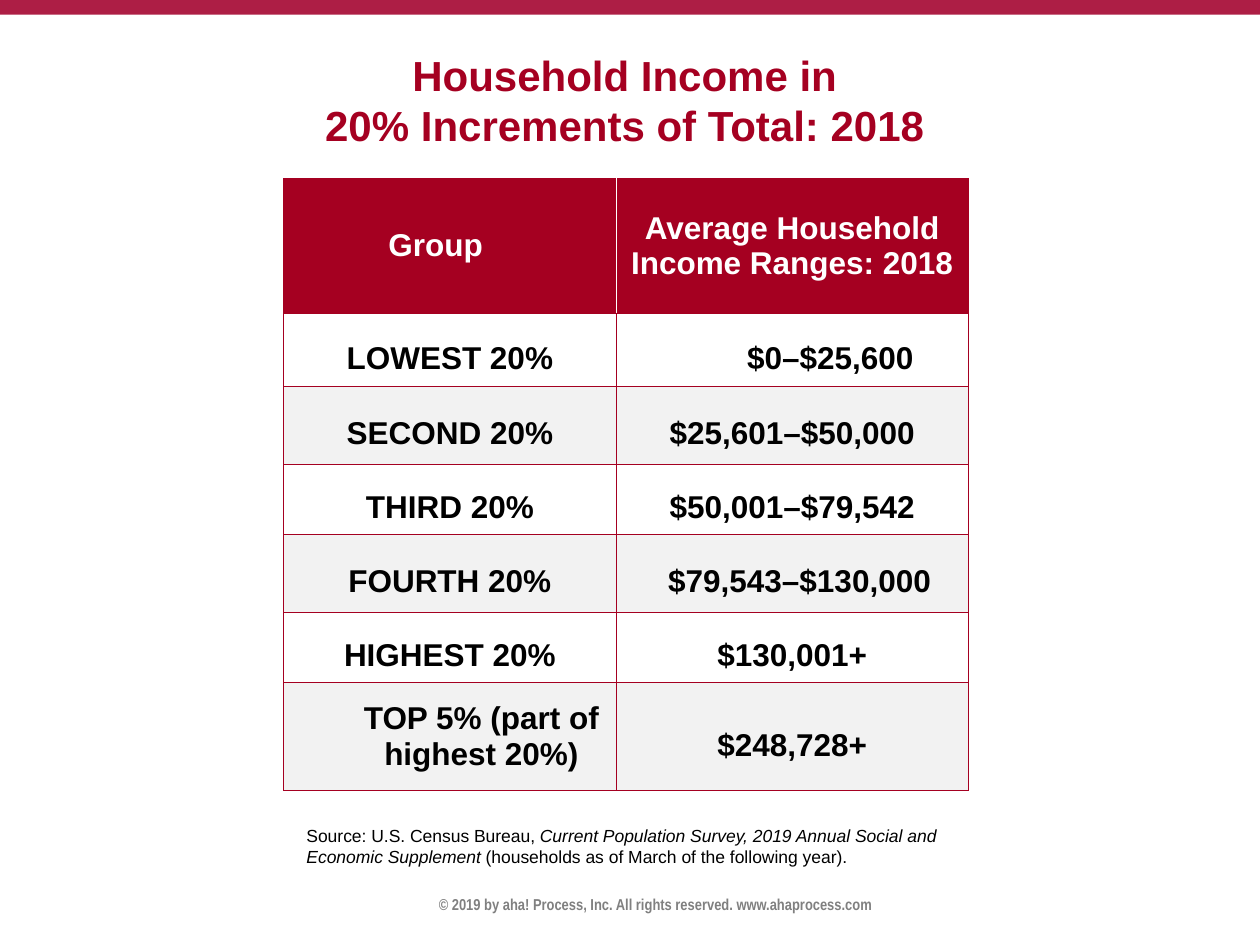
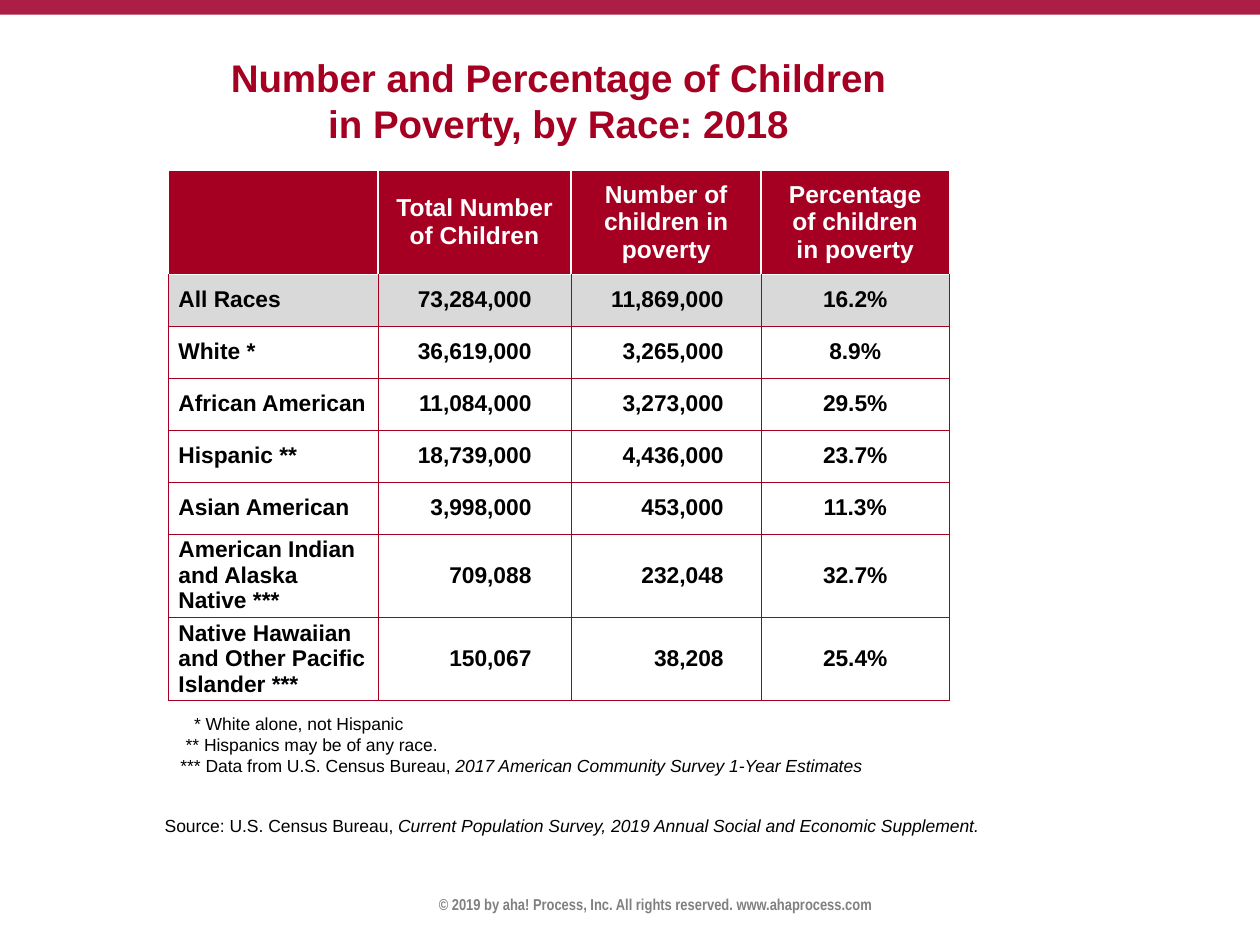
import lxml.etree
import pptx
import pptx.dml.color
import pptx.enum.shapes
import pptx.enum.text
import pptx.oxml.ns
import pptx.util

colour = pptx.dml.color.RGBColor.from_string
qn = pptx.oxml.ns.qn
ALIGN = pptx.enum.text.PP_ALIGN
LEFT, CENTER, RIGHT = ALIGN.LEFT, ALIGN.CENTER, ALIGN.RIGHT
MIDDLE = pptx.enum.text.MSO_ANCHOR.MIDDLE
CRIMSON, BAND, WHITE, BLACK, GREY = "A50021", "AD1E45", "FFFFFF", "000000", "808080"


def grid(*cells):
    """Turn counts of grid cells (the slide is 120 by 90) into lengths."""
    return [pptx.util.Inches(count / 12) for count in cells]


def write(frame, text, size, ink, align=LEFT, bold=False, font="Arial", spacing=None):
    """Fill a frame: a line break starts a paragraph, bars enclose italics."""
    frame.word_wrap = True
    for index, line in enumerate(text.split("\n")):
        para = frame.paragraphs[0] if index == 0 else frame.add_paragraph()
        para.alignment = align
        if spacing:
            para.line_spacing = spacing
        for part, words in enumerate(line.split("|")):
            if not words:
                continue
            span = para.add_run()
            span.text = words
            span.font.name, span.font.size = font, pptx.util.Pt(size)
            span.font.bold, span.font.italic = bold, part % 2 == 1
            span.font.color.rgb = colour(ink)


# Columns hold (width, alignment, left margin, right margin);
# exceptions hold (alignment, left margin, right margin) by row and column.
slides = [
    {
        "title": "Household Income in\n20% Increments of Total: 2018",
        "title size": 24,
        "title place": (27, 3, 65, 13),
        "table corner": (27, 17),
        "columns": [(31.7, CENTER, 0.8, 0.8), (33.5, CENTER, 0.8, 0.8)],
        "row heights": [12.8, 7, 7.4, 6.7, 7.4, 6.7, 10.3],
        "cells": [
            ("Group", "Average Household Income Ranges: 2018"),
            ("LOWEST 20%", "$0–$25,600"),
            ("SECOND 20%", "$25,601–$50,000"),
            ("THIRD 20%", "$50,001–$79,542"),
            ("FOURTH 20%", "$79,543–$130,000"),
            ("HIGHEST 20%", "$130,001+"),
            ("TOP 5% (part of highest 20%)", "$248,728+"),
        ],
        "exceptions": {
            (0, 0): (LEFT, 10, 0.8),
            (1, 1): (RIGHT, 0.8, 5.2),
            (4, 1): (CENTER, 2.2, 0.8),
            (6, 0): (CENTER, 6.8, 0.8),
        },
        "single spaced": [(6, 0)],
        "spacing": 1.5,
        "sizes": (18, 18),
        "fills": [WHITE, "F2F2F2"] * 3,
        "header edge": CRIMSON,
        "header rule": 0.25,
        "notes": [
            ((28, 78, 63, 5.3), "Source: U.S. Census Bureau, |Current Population Survey, "
             "2019 Annual Social and Economic Supplement |(households as of March of the "
             "following year).", [0]),
        ],
    },
    {
        "title": "Number and Percentage of Children\nin Poverty, by Race: 2018",
        "title size": 22,
        "title place": (16, 3, 74.4, 13),
        "table corner": (16, 16.2),
        "columns": [(20, LEFT, 1, 1), (18.4, RIGHT, 1, 3.8),
                    (18.1, RIGHT, 0.6, 3.6), (17.9, CENTER, 1, 1)],
        "row heights": [9.9] + [4.95] * 5 + [7.95] * 2,
        "cells": [
            ("", "Total Number of Children", "Number of children in poverty",
             "Percentage\nof children\nin poverty"),
            ("All Races", "73,284,000", "11,869,000", "16.2%"),
            ("White *", "36,619,000", "3,265,000", "8.9%"),
            ("African American", "11,084,000", "3,273,000", "29.5%"),
            ("Hispanic **", "18,739,000", "4,436,000", "23.7%"),
            ("Asian American", "3,998,000", "453,000", "11.3%"),
            ("American Indian\nand Alaska Native ***", "709,088", "232,048", "32.7%"),
            ("Native Hawaiian\nand Other Pacific Islander ***", "150,067", "38,208", "25.4%"),
        ],
        "exceptions": {(0, column): (CENTER, 1, 1) for column in range(4)},
        "single spaced": [],
        "spacing": None,
        "sizes": (14, 13),
        "fills": ["D9D9D9"] + [WHITE] * 6,
        "header edge": WHITE,
        "header rule": 1,
        "notes": [
            ((16, 67.3, 84, 7.3), "* White alone, not Hispanic\n"
             "** Hispanics may be of any race.\n"
             "*** Data from U.S. Census Bureau, |2017 American Community Survey "
             "1-Year Estimates|", [1.3, 0.5, 0]),
            ((14.5, 77, 87, 3.2), "Source: U.S. Census Bureau, |Current Population Survey, "
             "2019 Annual Social and Economic Supplement.|", [0]),
        ],
    },
]

deck = pptx.Presentation()
deck.slide_width, deck.slide_height = grid(120, 90)
layout = deck.slide_layouts.get_by_name("Title Only")

for number, content in enumerate(slides):
    page = deck.slides.add_slide(layout)

    # The first page's band and footer move to the layout, so every page shows them.
    if number == 0:
        band = page.shapes.add_shape(
            pptx.enum.shapes.MSO_SHAPE.RECTANGLE, *grid(0, 0, 120, 1.4))
        band.shadow.inherit = False
        band.fill.solid()
        band.fill.fore_color.rgb = colour(BAND)
        band.line.fill.background()
        footer = page.shapes.add_textbox(*grid(20, 84.6, 84.8, 3))
        write(footer.text_frame,
              "© 2019 by aha! Process, Inc. All rights reserved. www.ahaprocess.com",
              9, GREY, CENTER, True, "Arial Narrow")
        for shared in (band, footer):
            layout.shapes.element.append(shared.element)

    title = page.shapes.title
    title.left, title.top, title.width, title.height = grid(*content["title place"])
    title.text_frame.auto_size = pptx.enum.text.MSO_AUTO_SIZE.NONE
    title.text_frame.vertical_anchor = MIDDLE
    write(title.text_frame, content["title"], content["title size"], CRIMSON, CENTER, True)

    columns, heights = content["columns"], content["row heights"]
    widths = [column[0] for column in columns]
    table = page.shapes.add_table(
        len(heights), len(widths),
        *grid(*content["table corner"], sum(widths), sum(heights))).table
    table.horz_banding = False
    for column, width in zip(table.columns, grid(*widths)):
        column.width = width
    for row, height in zip(table.rows, grid(*heights)):
        row.height = height

    fills = [CRIMSON] + content["fills"]
    edge = content["header edge"]
    last = len(columns) - 1
    for row, texts in enumerate(content["cells"]):
        header = row == 0
        for column, text in enumerate(texts):
            cell = table.cell(row, column)
            align, left, right = content["exceptions"].get((row, column), columns[column][1:])
            cell.margin_left, cell.margin_right = grid(left, right)
            cell.margin_top = cell.margin_bottom = 0
            cell.vertical_anchor = MIDDLE

            outer, inner = (edge, 0.25), (WHITE, content["header rule"])
            plain = (CRIMSON, 0.25)
            borders = {
                "a:lnL": (outer if column == 0 else inner) if header else plain,
                "a:lnR": (outer if column == last else inner) if header else plain,
                "a:lnT": outer if row <= 1 else plain,
                "a:lnB": outer if header else plain,
            }
            for side, (ink, weight) in borders.items():
                line = lxml.etree.SubElement(cell._tc.get_or_add_tcPr(), qn(side),
                                             w=str(pptx.util.Pt(weight)))
                fill = lxml.etree.SubElement(line, qn("a:solidFill"))
                lxml.etree.SubElement(fill, qn("a:srgbClr"), val=ink)
            cell.fill.solid()
            cell.fill.fore_color.rgb = colour(fills[row])

            single = header or (row, column) in content["single spaced"]
            write(cell.text_frame, text, content["sizes"][0 if header else 1],
                  WHITE if header else BLACK, align, True,
                  spacing=None if single else content["spacing"])

    for place, text, indents in content["notes"]:
        note = page.shapes.add_textbox(*grid(*place))
        write(note.text_frame, text, 10, BLACK)
        for para, indent in zip(note.text_frame.paragraphs, grid(*indents)):
            para._p.get_or_add_pPr().set("marL", str(int(indent)))

deck.save("out.pptx")
